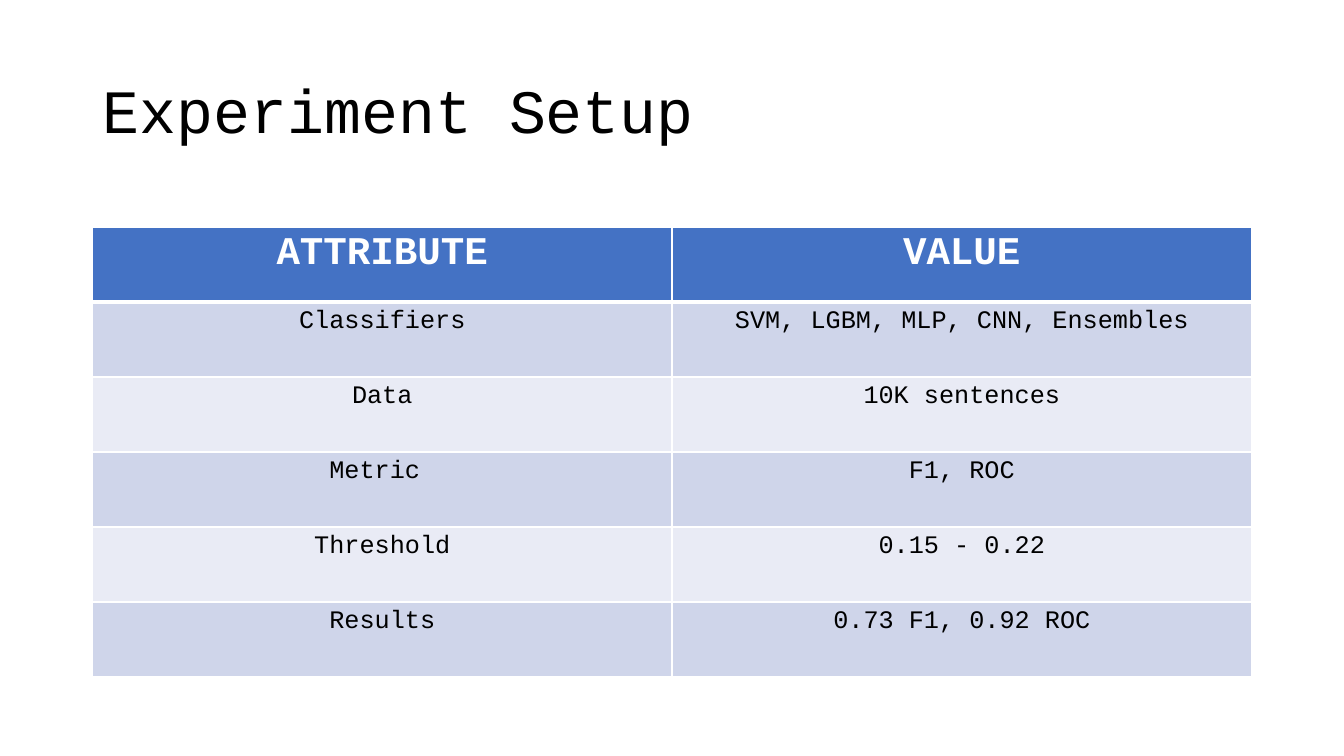
from dataclasses import dataclass

from lxml.etree import SubElement
from pptx import Presentation
from pptx.dml.color import RGBColor
from pptx.enum.text import MSO_ANCHOR, MSO_AUTO_SIZE, PP_ALIGN
from pptx.oxml.ns import qn
from pptx.slide import Slide
from pptx.table import _Cell
from pptx.text.text import _Paragraph
from pptx.util import Cm, Pt

COLORS = {
    "text": "000000",
    "header_text": "FFFFFF",
    "header": "4472C4",
    "odd_row": "CFD5EA",
    "even_row": "E9EBF5",
    "border": "FFFFFF",
}
FONT = "Courier New"
LEFT, WIDTH = Cm(2.33), Cm(29.21)
TABLE_TOP, ROW_HEIGHT = Cm(5.72), Cm(1.89)


@dataclass(frozen=True)
class Setting:
    """One attribute of the experiment and its value."""

    attribute: str
    value: str


@dataclass(frozen=True)
class RowStyle:
    """Look of one table row, with border widths in points."""

    fill: str
    text: str
    size: int
    bold: bool = False
    top: int = 1
    bottom: int = 1


HEADING = Setting("ATTRIBUTE", "VALUE")
SETTINGS = [
    Setting("Classifiers", "SVM, LGBM, MLP, CNN, Ensembles"),
    Setting("Data", "10K sentences"),
    Setting("Metric ", "F1, ROC"),
    Setting("Threshold", "0.15 - 0.22"),
    Setting("Results", "0.73 F1, 0.92 ROC"),
]


def row_style(index: int) -> RowStyle:
    """Return the header style or the banded style of a body row."""
    if index == 0:
        return RowStyle("header", "header_text", 28, bold=True, bottom=3)
    band = "odd_row" if index % 2 else "even_row"
    return RowStyle(band, "text", 18, top=3 if index == 1 else 1)


def add_run(paragraph: _Paragraph, text: str, size: int, color: str, bold: bool = False) -> None:
    """Append a formatted run to a paragraph."""
    run = paragraph.add_run()
    run.text = text
    run.font.name = FONT
    run.font.size = Pt(size)
    run.font.bold = bold
    run.font.color.rgb = RGBColor.from_string(COLORS[color])


def add_borders(cell: _Cell, style: RowStyle) -> None:
    """Draw the four border lines of a cell."""
    properties = cell._tc.get_or_add_tcPr()
    widths = {"lnL": 1, "lnR": 1, "lnT": style.top, "lnB": style.bottom}
    for side, width in widths.items():
        line = SubElement(properties, qn(f"a:{side}"), w=str(Pt(width)))
        fill = SubElement(line, qn("a:solidFill"))
        SubElement(fill, qn("a:srgbClr"), val=COLORS["border"])


def draw_cell(cell: _Cell, text: str, style: RowStyle) -> None:
    """Fill a table cell with its borders, colour and centred text."""
    add_borders(cell, style)
    cell.fill.solid()
    cell.fill.fore_color.rgb = RGBColor.from_string(COLORS[style.fill])
    paragraph = cell.text_frame.paragraphs[0]
    paragraph.alignment = PP_ALIGN.CENTER
    add_run(paragraph, text, style.size, style.text, style.bold)


def draw_title(slide: Slide, text: str) -> None:
    """Place and format the slide title."""
    title = slide.shapes.title
    title.left, title.top, title.width, title.height = LEFT, Cm(1.01), WIDTH, Cm(3.68)
    frame = title.text_frame
    frame.auto_size = MSO_AUTO_SIZE.NONE
    frame.vertical_anchor = MSO_ANCHOR.MIDDLE
    paragraph = frame.paragraphs[0]
    paragraph.alignment = PP_ALIGN.LEFT
    paragraph.line_spacing = 0.9
    add_run(paragraph, text, 44, "text")


def draw_settings(slide: Slide, settings: list[Setting]) -> None:
    """Draw the table of experiment settings."""
    rows = [HEADING, *settings]
    table = slide.shapes.add_table(
        len(rows), 2, LEFT, TABLE_TOP, WIDTH, ROW_HEIGHT * len(rows)
    ).table
    for index, setting in enumerate(rows):
        style = row_style(index)
        for column, text in enumerate((setting.attribute, setting.value)):
            draw_cell(table.cell(index, column), text, style)


def main() -> None:
    """Build and save the experiment setup slide."""
    presentation = Presentation()
    presentation.slide_width, presentation.slide_height = Cm(33.87), Cm(19.05)
    slide = presentation.slides.add_slide(presentation.slide_layouts[5])
    draw_title(slide, "Experiment Setup")
    draw_settings(slide, SETTINGS)
    presentation.save("out.pptx")


if __name__ == "__main__":
    main()
